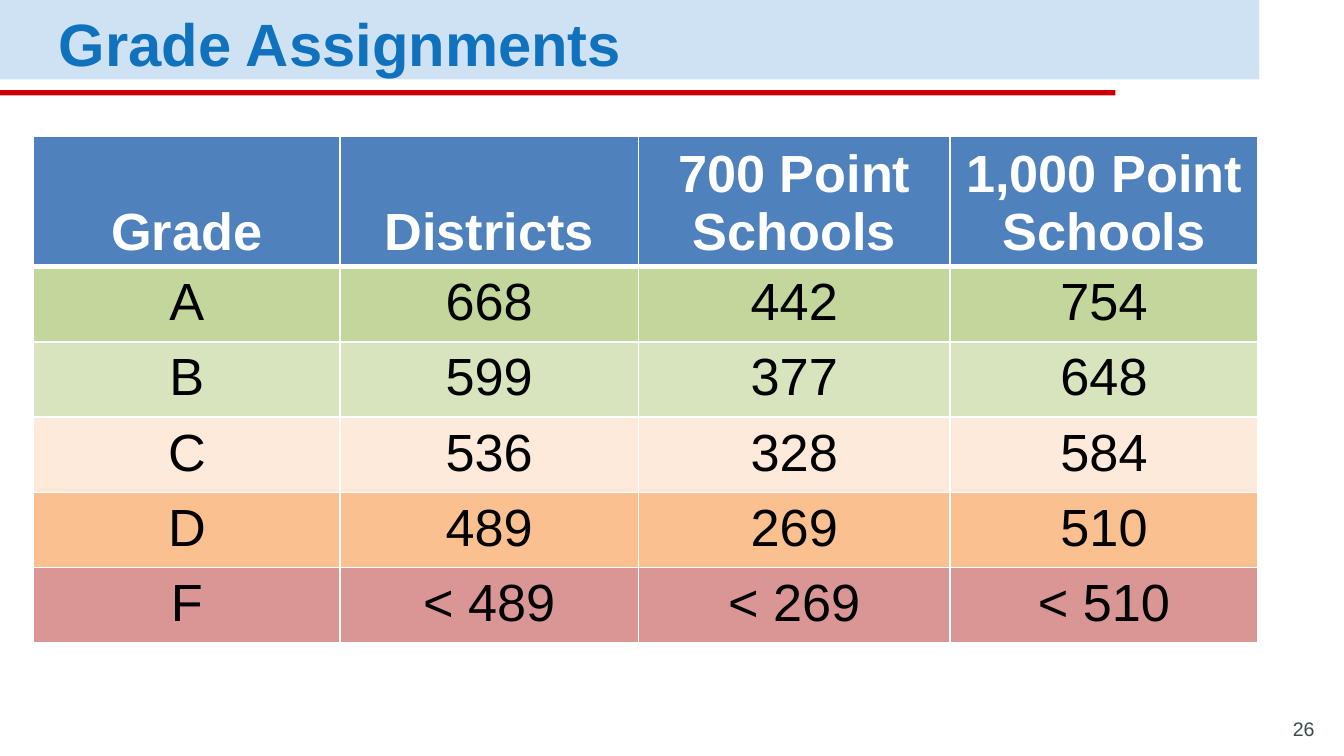
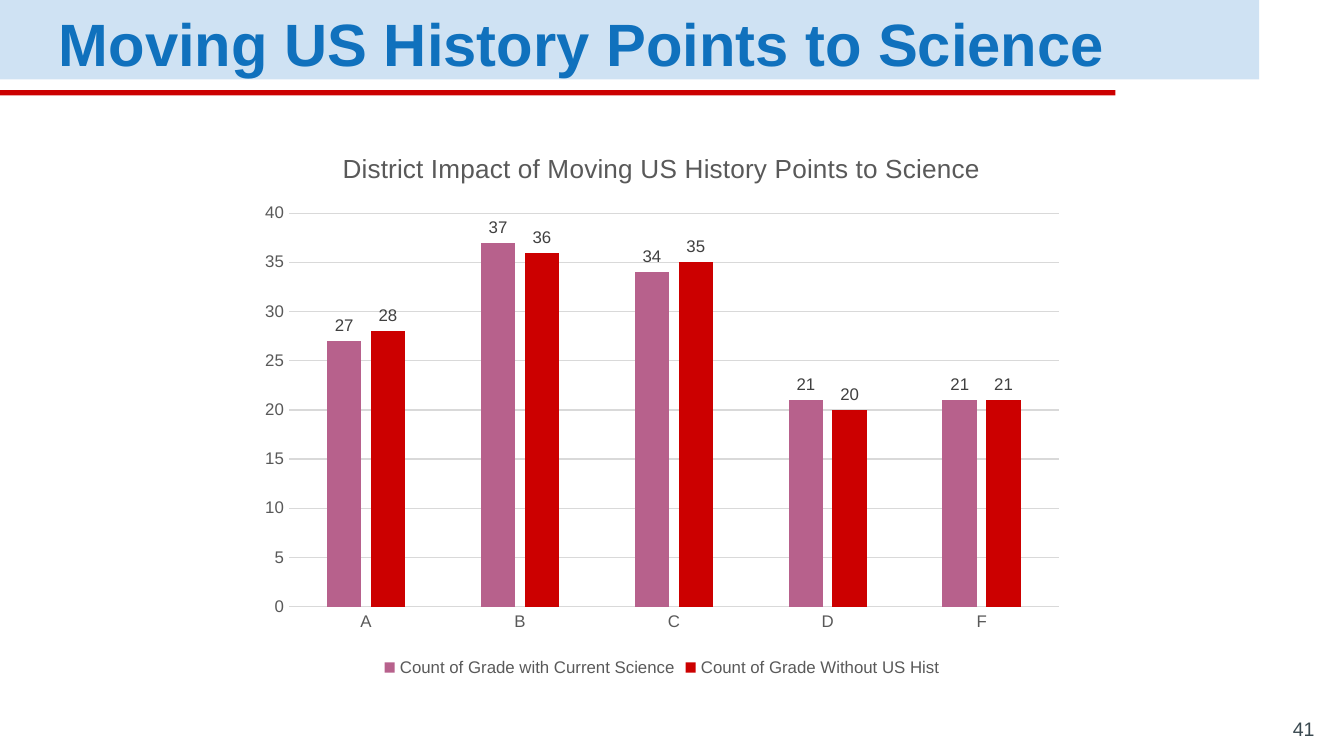
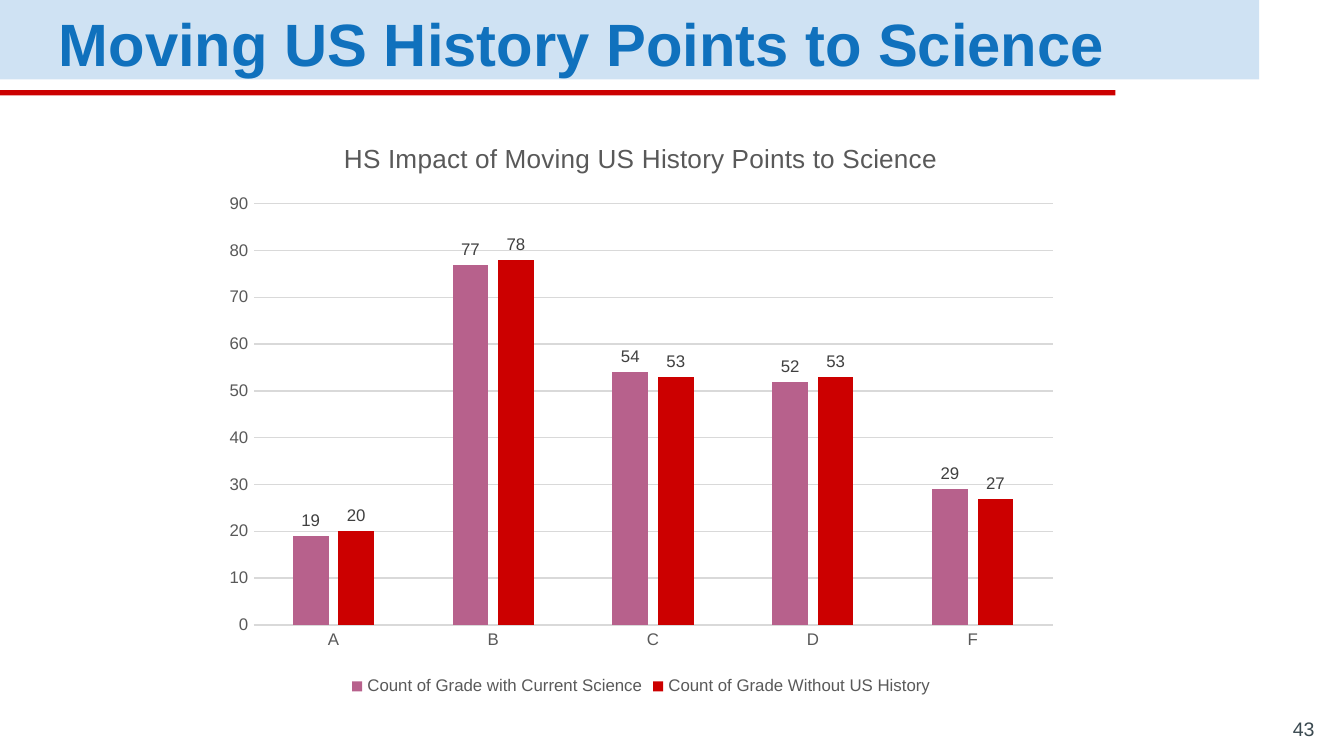
from lxml.etree import SubElement
from pptx import Presentation
from pptx.chart.data import CategoryChartData
from pptx.dml.color import RGBColor
from pptx.enum.chart import (XL_CHART_TYPE as ChartType, XL_LABEL_POSITION as LabelPos,
                             XL_LEGEND_POSITION as LegendPos, XL_TICK_MARK as TickMark)
from pptx.enum.shapes import MSO_SHAPE as Shape
from pptx.enum.text import MSO_ANCHOR as Anchor, PP_ALIGN as Align
from pptx.oxml.ns import qn
from pptx.util import Emu, Pt

FONT = "Arial"
BAND, RULE, TITLE, PAGE = "CFE2F3", "CC0000", "1071BD", "3A4950"
HEADER, WHITE, BLACK = "4F81BD", "FFFFFF", "000000"
CHART_TEXT, LABEL_TEXT, GRID = "595959", "404040", "D9D9D9"
SERIES_COLORS = ["B7618C", "CC0000"]
GRADES = ["A", "B", "C", "D", "F"]


def px(length):
    """Turn px (100 to the inch) into EMU."""
    return Emu(length * 9144)


def rgb(hex_color):
    return RGBColor.from_string(hex_color)


def style_font(font, size, color, bold=False):
    font.name, font.size, font.bold = FONT, Pt(size), bold
    font.color.rgb = rgb(color)


def add_run(paragraph, text, size, color, bold=False):
    run = paragraph.add_run()
    run.text = text
    style_font(run.font, size, color, bold)


def add_bar(slide, width, height, top, color):
    bar = slide.shapes.add_shape(Shape.RECTANGLE, 0, px(top), px(width), px(height))
    bar.shadow.inherit = False
    bar.fill.solid()
    bar.fill.fore_color.rgb = rgb(color)
    bar.line.fill.background()


def add_text(slide, box, text, size, color, anchor, bold=False):
    """Add a one-line text box and return its paragraph."""
    frame = slide.shapes.add_textbox(*map(px, box)).text_frame
    frame.word_wrap = True
    frame.vertical_anchor = anchor
    frame.margin_left = frame.margin_right = px(10)
    frame.margin_top = frame.margin_bottom = px(10)
    add_run(frame.paragraphs[0], text, size, color, bold)
    return frame.paragraphs[0]


def add_page(deck, title, number):
    """Add a slide with the shared band, rule, title and page number."""
    slide = deck.slides.add_slide(deck.slide_layouts[6])
    add_bar(slide, 937, 59, 0, BAND)
    add_bar(slide, 830, 4, 67, RULE)
    heading = add_text(slide, (34, 3, 903, 49), title, 32, TITLE, Anchor.MIDDLE, True)
    heading.line_spacing = 1.15
    heading.space_after = Pt(16)
    page = add_text(slide, (928, 534, 60, 26), str(number), 10.5, PAGE, Anchor.BOTTOM)
    page.alignment = Align.RIGHT
    return slide


def set_borders(cell, **widths):
    """Draw white borders; widths are points by side, L, R, T and B."""
    properties = cell._tc.get_or_add_tcPr()
    for side in "LRTB":
        line = SubElement(properties, qn(f"a:ln{side}"), w=str(Pt(widths.get(side, 1))))
        fill = SubElement(line, qn("a:solidFill"))
        SubElement(fill, qn("a:srgbClr"), val=WHITE)


def fill_cell(cell, text, fill, color, margins, bold=False):
    """Fill a cell; margins are its top and bottom ones in px."""
    cell.margin_top, cell.margin_bottom = map(px, margins)
    cell.fill.solid()
    cell.fill.fore_color.rgb = rgb(fill)
    paragraph = cell.text_frame.paragraphs[0]
    paragraph.alignment = Align.CENTER
    add_run(paragraph, text, 28, color, bold)


def add_grade_table(slide, header, rows, row_fills):
    widths, heights = [228, 222, 232, 229], [91] + [56] * len(rows)
    table = slide.shapes.add_table(len(heights), len(widths), px(25), px(101),
                                   px(sum(widths)), px(sum(heights))).table
    for column, width in zip(table.columns, widths):
        column.width = px(width)
    for row, height in zip(table.rows, heights):
        row.height = px(height)
    for c, text in enumerate(header):
        cell = table.cell(0, c)
        set_borders(cell, B=3)
        fill_cell(cell, text, HEADER, WHITE, (0, 4), True)
        cell.vertical_anchor = Anchor.BOTTOM
    for r, (values, fill) in enumerate(zip(rows, row_fills), 1):
        for c, text in enumerate(values):
            cell = table.cell(r, c)
            set_borders(cell, T=3 if r == 1 else 1)
            fill_cell(cell, text, fill, BLACK, (5, 1))


def style_line(line, color):
    line.color.rgb = rgb(color)
    line.width = Pt(0.75)


def add_impact_chart(slide, box, title, counts):
    """Add a column chart of grade counts, given as values by series name."""
    data = CategoryChartData()
    data.categories = GRADES
    for name, values in counts.items():
        data.add_series(name, values)
    chart = slide.shapes.add_chart(ChartType.COLUMN_CLUSTERED, *map(px, box), data).chart
    style_font(chart.font, 10, BLACK)

    chart.has_title = True
    add_run(chart.chart_title.text_frame.paragraphs[0], title, 14, CHART_TEXT)
    chart.chart_title.include_in_layout = False
    chart.has_legend = True
    chart.legend.position = LegendPos.BOTTOM
    chart.legend.include_in_layout = False
    style_font(chart.legend.font, 9, CHART_TEXT)

    for axis in (chart.category_axis, chart.value_axis):
        axis.major_tick_mark = axis.minor_tick_mark = TickMark.NONE
        style_font(axis.tick_labels.font, 9, CHART_TEXT)
    style_line(chart.category_axis.format.line, GRID)
    style_line(chart.value_axis.major_gridlines.format.line, GRID)
    chart.value_axis.format.line.fill.background()

    plot = chart.plots[0]
    plot.gap_width, plot.overlap = 219, -27
    plot.vary_by_categories = False
    for series, color in zip(plot.series, SERIES_COLORS):
        series.format.fill.solid()
        series.format.fill.fore_color.rgb = rgb(color)
        labels = series.data_labels
        labels.show_value = True
        labels.position = LabelPos.OUTSIDE_END
        style_font(labels.font, 9, LABEL_TEXT)


def main():
    deck = Presentation()
    deck.slide_width = px(1000)
    deck.slide_height = Emu(deck.slide_width * 9 // 16)

    add_grade_table(
        add_page(deck, "Grade Assignments", 26),
        ["Grade", "Districts", "700 Point Schools", "1,000 Point Schools"],
        [["A", "668", "442", "754"],
         ["B", "599", "377", "648"],
         ["C", "536", "328", "584"],
         ["D", "489", "269", "510"],
         ["F", "< 489", "< 269", "< 510"]],
        ["C3D69B", "D7E4BD", "FDEADA", "FAC090", "D99694"])

    moving_points = "Moving US History Points to Science"
    add_impact_chart(
        add_page(deck, moving_points, 41), (185, 96, 615, 412),
        f"District Impact of {moving_points}",
        {"Count of Grade with Current Science": [27, 37, 34, 21, 21],
         "Count of Grade Without US Hist": [28, 36, 35, 20, 21]})
    add_impact_chart(
        add_page(deck, moving_points, 43), (158, 88, 638, 434),
        f"HS Impact of {moving_points}",
        {"Count of Grade with Current Science": [19, 77, 54, 52, 29],
         "Count of Grade Without US History": [20, 78, 53, 53, 27]})

    deck.save("out.pptx")


if __name__ == "__main__":
    main()
